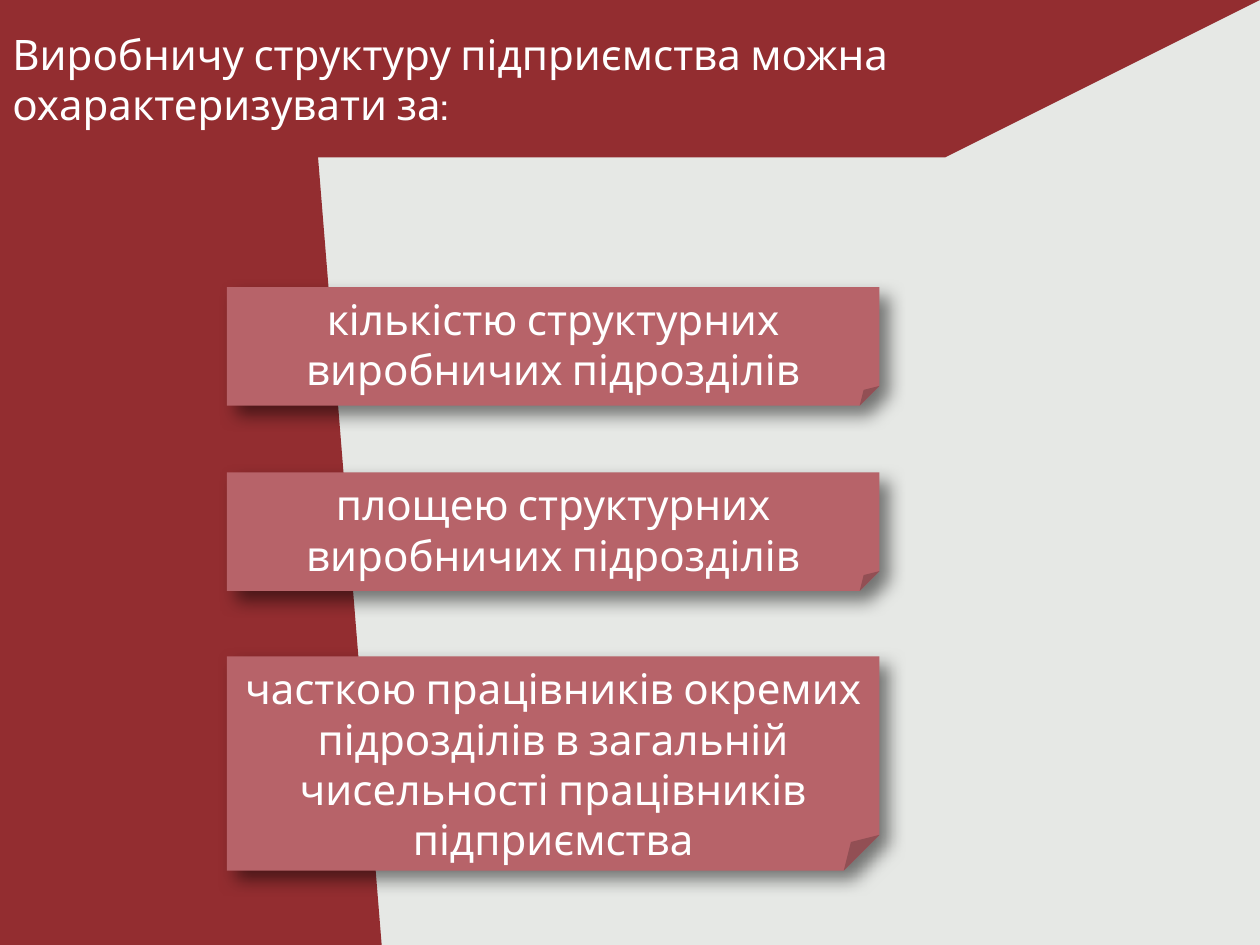
from lxml import etree
from pptx import Presentation
from pptx import util as u
from pptx.dml.color import RGBColor
from pptx.enum import shapes, text
from pptx.oxml import ns

TITLE = "Виробничу структуру підприємства можна охарактеризувати за:"
CARDS = [
    ("кількістю структурних виробничих підрозділів", 2.28, 0.94, 0.9),
    ("площею структурних виробничих підрозділів", 3.75, 0.94, 0.9),
    ("часткою працівників окремих підрозділів в загальній "
     "чисельності працівників підприємства", 5.21, 1.7, 1.7),
]
COLORS = {"back": "E6E8E5", "band": "932D30", "card": "B76369",
          "text": "FFFFFF", "shadow": "000000"}
FONT, SIZE = "Cabin", 24
W, H = 10, 7.5
HEAD_H = H / 6
SIDE_W = 3.03
CARD_X, CARD_W = 0.18 * W, 5.18


def rgb(name):
    return RGBColor.from_string(COLORS[name])


def add_shape(s, kind, x, y, w, h, color):
    sp = s.shapes.add_shape(kind, *map(u.Inches, (x, y, w, h)))
    sp.shadow.inherit = False
    sp.fill.solid()
    sp.fill.fore_color.rgb = rgb(color)
    sp.line.fill.background()
    return sp


def flip(sp, *axes):
    for axis in axes:
        sp._element.spPr.xfrm.set("flip" + axis, "1")


def add_shadow(sp):
    effects = sp._element.spPr.find(ns.qn("a:effectLst"))
    shadow = etree.SubElement(
        effects, ns.qn("a:outerShdw"), blurRad=str(u.Pt(10)),
        dist=str(u.Pt(7.1)), dir=str(45 * 60000), algn="tl", rotWithShape="0")
    color = etree.SubElement(shadow, ns.qn("a:srgbClr"), val=COLORS["shadow"])
    etree.SubElement(color, ns.qn("a:alpha"), val="50000")


def add_text(s, words, x, y, w, h, align):
    tf = s.shapes.add_textbox(*map(u.Inches, (x, y, w, h))).text_frame
    tf.word_wrap = True
    tf.vertical_anchor = text.MSO_ANCHOR.MIDDLE
    p = tf.paragraphs[0]
    p.text = words
    p.alignment = align
    p.font.name = FONT
    p.font.size = u.Pt(SIZE)
    p.font.color.rgb = rgb("text")


def main():
    prs = Presentation()
    prs.slide_width, prs.slide_height = u.Inches(W), u.Inches(H)
    s = prs.slides.add_slide(prs.slide_layouts[6])
    s.background.fill.solid()
    s.background.fill.fore_color.rgb = rgb("back")

    kinds = shapes.MSO_SHAPE
    header = add_shape(s, kinds.TRAPEZOID, 0, 0, W, HEAD_H, "band")
    header.adjustments[0] = 2
    flip(header, "V")
    side = add_shape(s, kinds.FLOWCHART_MANUAL_INPUT, (SIDE_W - H) / 2,
                     (H - SIDE_W) / 2, H, SIDE_W, "band")
    side.rotation = 270
    flip(side, "H", "V")
    add_text(s, TITLE, 0, 0, W, HEAD_H, text.PP_ALIGN.LEFT)

    for words, y, h, text_h in CARDS:
        card = add_shape(s, kinds.FOLDED_CORNER, CARD_X, y, CARD_W, h, "card")
        add_shadow(card)
        add_text(s, words, CARD_X, y, CARD_W, text_h, text.PP_ALIGN.CENTER)

    prs.save("out.pptx")


if __name__ == "__main__":
    main()
